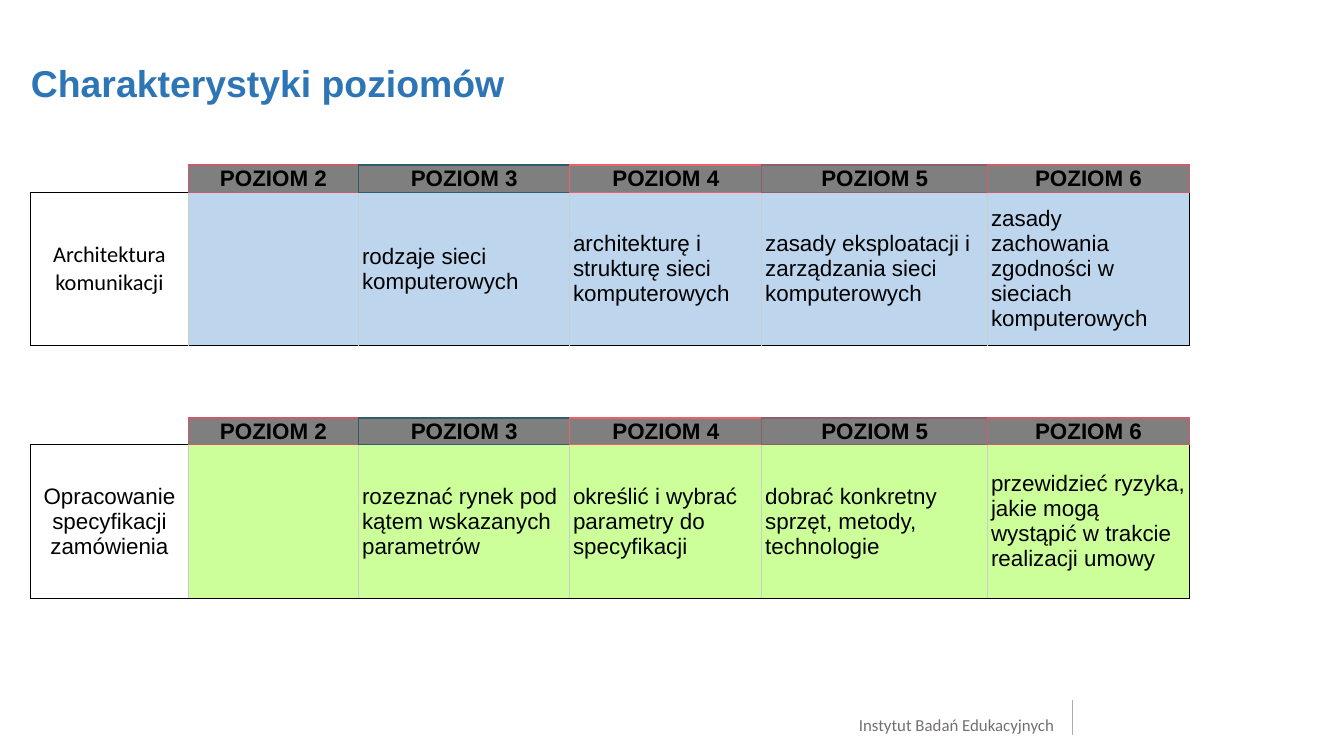
import pptx
import pptx.dml.color
import pptx.enum.shapes
import pptx.enum.text
import pptx.oxml
import pptx.util
from lxml import etree
from pptx.dml.color import RGBColor
from pptx.util import Inches

BLACK = RGBColor(0x00, 0x00, 0x00)
WHITE = RGBColor(0xFF, 0xFF, 0xFF)
TITLE_BLUE = RGBColor(0x2E, 0x75, 0xB6)
FOOTER_TEXT = RGBColor(0x75, 0x70, 0x70)
FOOTER_LINE = RGBColor(0xAE, 0xAB, 0xAB)
HEADER_FILL = RGBColor(0x7F, 0x7F, 0x7F)
GRID = RGBColor(0xCC, 0xCC, 0xCC)
BLUE_FILL = RGBColor(0xBD, 0xD6, 0xEE)
GREEN_FILL = RGBColor(0xCC, 0xFF, 0x99)
ROSE = RGBColor(0xD0, 0x59, 0x68)
TEAL = RGBColor(0x30, 0x5D, 0x68)
CORAL = RGBColor(0xF0, 0x5F, 0x68)
PLUM = RGBColor(0x90, 0x5F, 0x68)
RED = RGBColor(0xD0, 0x5D, 0x68)

LEFT = 0.23
LABEL_WIDTH = 1.17
LEVEL_WIDTHS = [1.27, 1.57, 1.43, 1.68, 1.5]
HEADER_HEIGHT = 0.2
BODY_HEIGHT = 1.14
CELL_MARGIN = pptx.util.Pt(1.8)
LEVELS = [f"POZIOM {level}" for level in range(2, 7)]
HEADER_EDGES = [ROSE, TEAL, CORAL, PLUM, RED, RED]
BODY_EDGES = [BLACK] + [GRID] * 5 + [BLACK]

ALIGN = pptx.enum.text.PP_ALIGN
DRAWING = pptx.oxml.ns.nsuri("a")


class SlideBuilder:
    def __init__(self, slide, font="Arial", size=12):
        self.slide = slide
        self.font = font
        self.size = size

    def add_run(self, paragraph, text, align, color=BLACK, bold=False, font=None, size=None):
        paragraph.alignment = align
        run = paragraph.add_run()
        run.text = text
        run.font.name = font or self.font
        run.font.size = pptx.util.Pt(size or self.size)
        run.font.bold = bold
        run.font.color.rgb = color

    def text(self, left, top, width, height, text, align, **style):
        shape = self.slide.shapes.add_textbox(
            Inches(left), Inches(top), Inches(width), Inches(height))
        frame = shape.text_frame
        frame.word_wrap = True
        frame.margin_left = frame.margin_right = 0
        frame.margin_top = frame.margin_bottom = 0
        self.add_run(frame.paragraphs[0], text, align, **style)

    def line(self, x, top, bottom, color, width):
        connector = self.slide.shapes.add_connector(
            pptx.enum.shapes.MSO_CONNECTOR.STRAIGHT,
            Inches(x), Inches(bottom), Inches(x), Inches(top))
        connector.line.color.rgb = color
        connector.line.width = pptx.util.Pt(width)
        properties = connector.element.find(pptx.oxml.ns.qn("p:spPr"))
        etree.SubElement(properties, f"{{{DRAWING}}}effectLst")

    def border(self, cell, side, color, width):
        properties = cell._tc.get_or_add_tcPr()
        line = etree.SubElement(properties, f"{{{DRAWING}}}ln{side}",
                                w=str(int(pptx.util.Pt(width))))
        fill = etree.SubElement(line, f"{{{DRAWING}}}solidFill")
        etree.SubElement(fill, f"{{{DRAWING}}}srgbClr", val=str(color))

    def table_row(self, left, top, widths, height):
        """Add a one-row table without style bands and return its cells."""
        table = self.slide.shapes.add_table(
            1, len(widths), Inches(left), Inches(top),
            Inches(sum(widths)), Inches(height)).table
        table.first_row = table.horz_banding = False
        table.rows[0].height = Inches(height)
        for column, width in zip(table.columns, widths):
            column.width = Inches(width)
        cells = list(table.rows[0].cells)
        for cell in cells:
            cell.margin_left = cell.margin_right = CELL_MARGIN
            cell.margin_top = cell.margin_bottom = 0
            cell.vertical_anchor = pptx.enum.text.MSO_ANCHOR.MIDDLE
        return cells

    def level_header(self, top):
        cells = self.table_row(LEFT + LABEL_WIDTH, top, LEVEL_WIDTHS, HEADER_HEIGHT)
        for index, (cell, level) in enumerate(zip(cells, LEVELS)):
            color = HEADER_EDGES[index]
            self.border(cell, "L", color, 0.6)
            self.border(cell, "R", HEADER_EDGES[index + 1], 0.6)
            self.border(cell, "T", color, 1.2)
            self.border(cell, "B", color, 0.6)
            cell.fill.solid()
            cell.fill.fore_color.rgb = HEADER_FILL
            self.add_run(cell.text_frame.paragraphs[0], level, ALIGN.CENTER, bold=True)

    def skill_row(self, top, label, label_font, descriptions, color):
        cells = self.table_row(LEFT, top, [LABEL_WIDTH] + LEVEL_WIDTHS, BODY_HEIGHT)
        for index, (cell, text) in enumerate(zip(cells, [label] + descriptions)):
            is_label = index == 0
            self.border(cell, "L", BODY_EDGES[index], 0.6)
            self.border(cell, "R", BODY_EDGES[index + 1], 0.6)
            self.border(cell, "T", BLACK, 0.6)
            self.border(cell, "B", BLACK, 0.6)
            cell.fill.solid()
            cell.fill.fore_color.rgb = WHITE if is_label else color
            if text:
                self.add_run(cell.text_frame.paragraphs[0], text,
                             ALIGN.CENTER if is_label else ALIGN.LEFT,
                             font=label_font if is_label else None)


def main():
    presentation = pptx.Presentation()
    presentation.slide_width = Inches(10)
    presentation.slide_height = Inches(10) * 9 // 16
    builder = SlideBuilder(presentation.slides.add_slide(presentation.slide_layouts[6]))

    builder.text(6.17, 5.32, 1.67, 0.14, "Instytut Badań Edukacyjnych", ALIGN.RIGHT,
                 color=FOOTER_TEXT, font="Calibri", size=9)
    builder.line(7.98, 5.21, 5.47, FOOTER_LINE, 0.75)
    builder.text(LEFT, 0.45, 8.62, 0.58, "Charakterystyki poziomów", ALIGN.LEFT,
                 color=TITLE_BLUE, bold=True, size=20)

    skills = [
        (1.23, "Architektura komunikacji", "Calibri", [
            "",
            "rodzaje sieci komputerowych",
            "architekturę i strukturę sieci komputerowych",
            "zasady eksploatacji i zarządzania sieci komputerowych",
            "zasady zachowania zgodności w sieciach komputerowych",
        ], BLUE_FILL),
        (3.11, "Opracowanie specyfikacji zamówienia", "Arial", [
            "",
            "rozeznać rynek pod kątem wskazanych parametrów",
            "określić i wybrać parametry do specyfikacji",
            "dobrać konkretny sprzęt, metody, technologie",
            "przewidzieć ryzyka, jakie mogą wystąpić w trakcie realizacji umowy",
        ], GREEN_FILL),
    ]
    for top, label, label_font, descriptions, color in skills:
        builder.skill_row(top + HEADER_HEIGHT, label, label_font, descriptions, color)
        builder.level_header(top)

    presentation.save("out.pptx")


if __name__ == "__main__":
    main()
